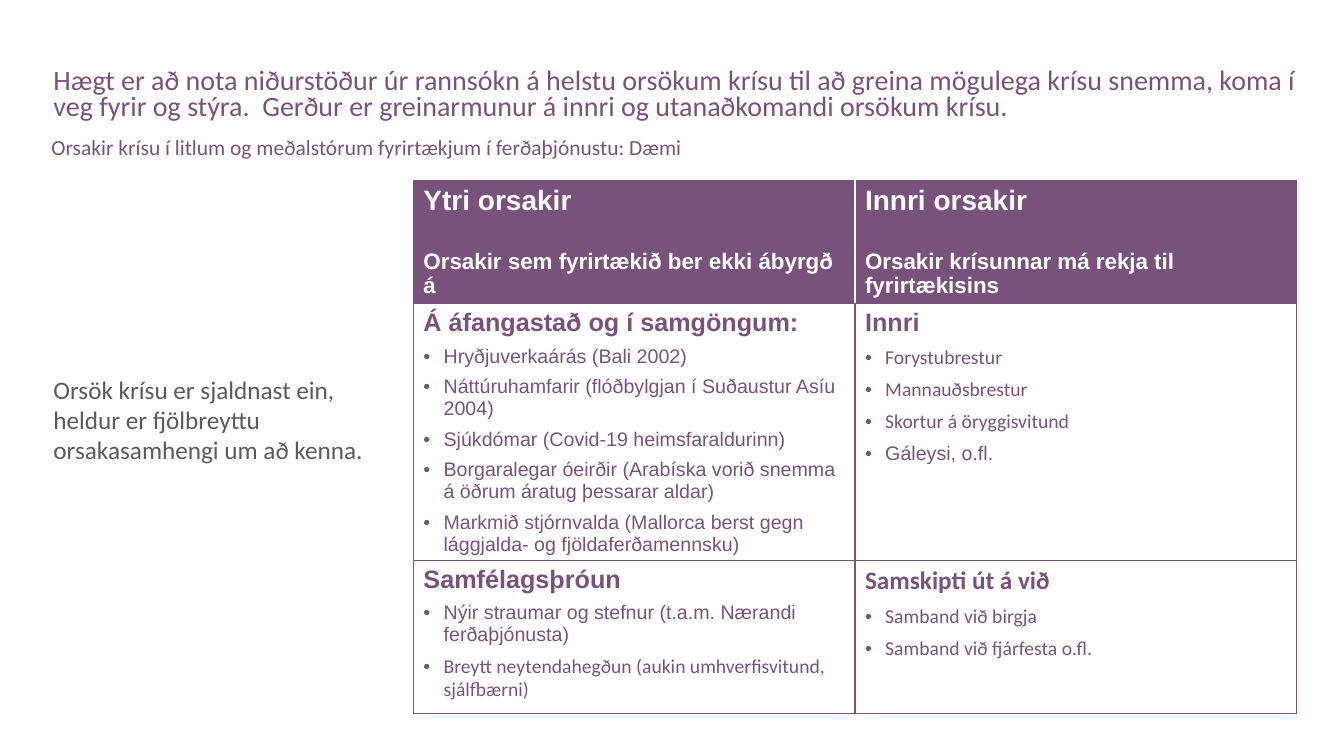
from lxml import etree
from pptx import Presentation
from pptx.dml.color import RGBColor
from pptx.enum.text import MSO_ANCHOR, MSO_AUTO_SIZE, PP_ALIGN
from pptx.oxml.ns import qn
from pptx.util import Inches, Pt

LEFT = PP_ALIGN.LEFT
TOP, MIDDLE = MSO_ANCHOR.TOP, MSO_ANCHOR.MIDDLE
NO_AUTOFIT = MSO_AUTO_SIZE.NONE

# Content
COLORS = {"plum": "79527B", "grey": "595A59", "white": "FFFFFF"}
SANS, HUMANIST = "Arial", "Calibri"

STATEMENT = (
    "Hægt er að nota niðurstöður úr rannsókn á helstu orsökum krísu til að greina "
    "mögulega krísu snemma, koma í veg fyrir og stýra.  Gerður er greinarmunur á "
    "innri og utanaðkomandi orsökum krísu."
)
SUBHEADING = "Orsakir krísu í litlum og meðalstórum fyrirtækjum í ferðaþjónustu: Dæmi"
REMARK = (
    "Orsök krísu er sjaldnast ein, heldur er fjölbreyttu orsakasamhengi um að kenna."
)

HEADERS = [
    ("Ytri orsakir", "Orsakir sem fyrirtækið ber ekki ábyrgð á"),
    ("Innri orsakir", "Orsakir krísunnar má rekja til fyrirtækisins"),
]
# Each cell: (heading, font), then its bullets as (wording, font)
CAUSES = [
    [
        [
            ("Á áfangastað og í samgöngum:", SANS),
            ("Hryðjuverkaárás (Bali 2002)", SANS),
            ("Náttúruhamfarir (flóðbylgjan í Suðaustur Asíu 2004)", SANS),
            ("Sjúkdómar (Covid-19 heimsfaraldurinn)", SANS),
            ("Borgaralegar óeirðir (Arabíska vorið snemma á öðrum áratug þessarar aldar)", SANS),
            ("Markmið stjórnvalda (Mallorca berst gegn lággjalda- og fjöldaferðamennsku)", SANS),
        ],
        [
            ("Innri", SANS),
            ("Forystubrestur", HUMANIST),
            ("Mannauðsbrestur", HUMANIST),
            ("Skortur á öryggisvitund", HUMANIST),
            ("Gáleysi, o.fl.", SANS),
        ],
    ],
    [
        [
            ("Samfélagsþróun", SANS),
            ("Nýir straumar og stefnur (t.a.m. Nærandi ferðaþjónusta)", SANS),
            ("Breytt neytendahegðun (aukin umhverfisvitund, sjálfbærni)", HUMANIST),
        ],
        [
            ("Samskipti út á við", HUMANIST),
            ("Samband við birgja", HUMANIST),
            ("Samband við fjárfesta o.fl.", HUMANIST),
        ],
    ],
]

TABLE_LEFT, TABLE_TOP = 4.1, 1.79
COLUMN_WIDTH = 4.38
ROW_HEIGHTS = [1.19, 2.37, 1.52]
BULLET_INDENT = Inches(0.2)


def add_run(paragraph, wording, size, font, color, bold=False):
    run = paragraph.add_run()
    run.text = wording
    run.font.size = Pt(size)
    run.font.name = font
    run.font.bold = bold
    run.font.color.rgb = RGBColor.from_string(COLORS[color])


def fill_placeholder(placeholder, box, wording, size, color, spacing, anchor):
    placeholder.left, placeholder.top, placeholder.width, placeholder.height = map(Inches, box)
    frame = placeholder.text_frame
    frame.word_wrap = True
    frame.auto_size = NO_AUTOFIT
    frame.vertical_anchor = anchor
    paragraph = frame.paragraphs[0]
    props = paragraph._p.get_or_add_pPr()
    props.set("marL", "0")
    props.set("indent", "0")
    etree.SubElement(props, qn("a:buNone"))
    paragraph.alignment = LEFT
    paragraph.line_spacing = spacing
    paragraph.space_before = Pt(0)
    add_run(paragraph, wording, size, HUMANIST, color)
    return frame


def add_bullet(paragraph):
    props = paragraph._p.get_or_add_pPr()
    props.set("marL", str(BULLET_INDENT))
    props.set("indent", str(-BULLET_INDENT))
    bullet_color = etree.SubElement(props, qn("a:buClr"))
    etree.SubElement(bullet_color, qn("a:srgbClr"), val=COLORS["plum"])
    etree.SubElement(props, qn("a:buFont"), typeface=SANS)
    etree.SubElement(props, qn("a:buChar"), char="•")
    paragraph.space_before = Pt(6)


def style_cell(cell, fill, white_side=None):
    props = cell._tc.get_or_add_tcPr()
    for side in "LRTB":
        line = etree.SubElement(props, qn("a:ln" + side), w=str(Pt(1)))
        solid = etree.SubElement(line, qn("a:solidFill"))
        color = "white" if side == white_side else "plum"
        etree.SubElement(solid, qn("a:srgbClr"), val=COLORS[color])
    cell.fill.solid()
    cell.fill.fore_color.rgb = RGBColor.from_string(COLORS[fill])


presentation = Presentation()
presentation.slide_width = Inches(13.33)
presentation.slide_height = Inches(7.5)
slide = presentation.slides.add_slide(presentation.slide_layouts[3])

# Statement, subheading and side remark
statement, remark, subheading = list(slide.placeholders)[:3]
fill_placeholder(statement, (0.43, 0.63, 12.54, 0.64), STATEMENT, 20, "plum", 0.8, TOP)
fill_placeholder(subheading, (0.41, 1.35, 12.56, 0.28), SUBHEADING, 15.3, "plum", 0.7, TOP)
remark_frame = fill_placeholder(
    remark, (0.43, TABLE_TOP, 3.49, 5.04), REMARK, 18, "grey", 1.0, MIDDLE
)
remark_frame.margin_bottom = Inches(0.35)

# Table of causes
table = slide.shapes.add_table(
    len(ROW_HEIGHTS), len(HEADERS), Inches(TABLE_LEFT), Inches(TABLE_TOP),
    Inches(COLUMN_WIDTH * len(HEADERS)), Inches(sum(ROW_HEIGHTS)),
).table
for column in table.columns:
    column.width = Inches(COLUMN_WIDTH)
for row, height in zip(table.rows, ROW_HEIGHTS):
    row.height = Inches(height)

# Header row
for col, (heading, explanation) in enumerate(HEADERS):
    cell = table.cell(0, col)
    style_cell(cell, "plum", white_side="RL"[col])
    frame = cell.text_frame
    add_run(frame.paragraphs[0], heading, 20, SANS, "white", bold=True)
    detail = frame.add_paragraph()
    detail.space_before = Pt(23)
    add_run(detail, explanation, 16, SANS, "white", bold=True)

# Headings and bullets
for row, cause_row in enumerate(CAUSES, start=1):
    for col, (heading, *bullets) in enumerate(cause_row):
        cell = table.cell(row, col)
        style_cell(cell, "white")
        frame = cell.text_frame
        add_run(frame.paragraphs[0], heading[0], 18, heading[1], "plum", bold=True)
        for wording, font in bullets:
            paragraph = frame.add_paragraph()
            add_bullet(paragraph)
            add_run(paragraph, wording, 14, font, "plum")

# Unused date, footer and number placeholders
for placeholder in list(slide.placeholders):
    if not placeholder.text_frame.text:
        placeholder._element.getparent().remove(placeholder._element)

presentation.save("out.pptx")
